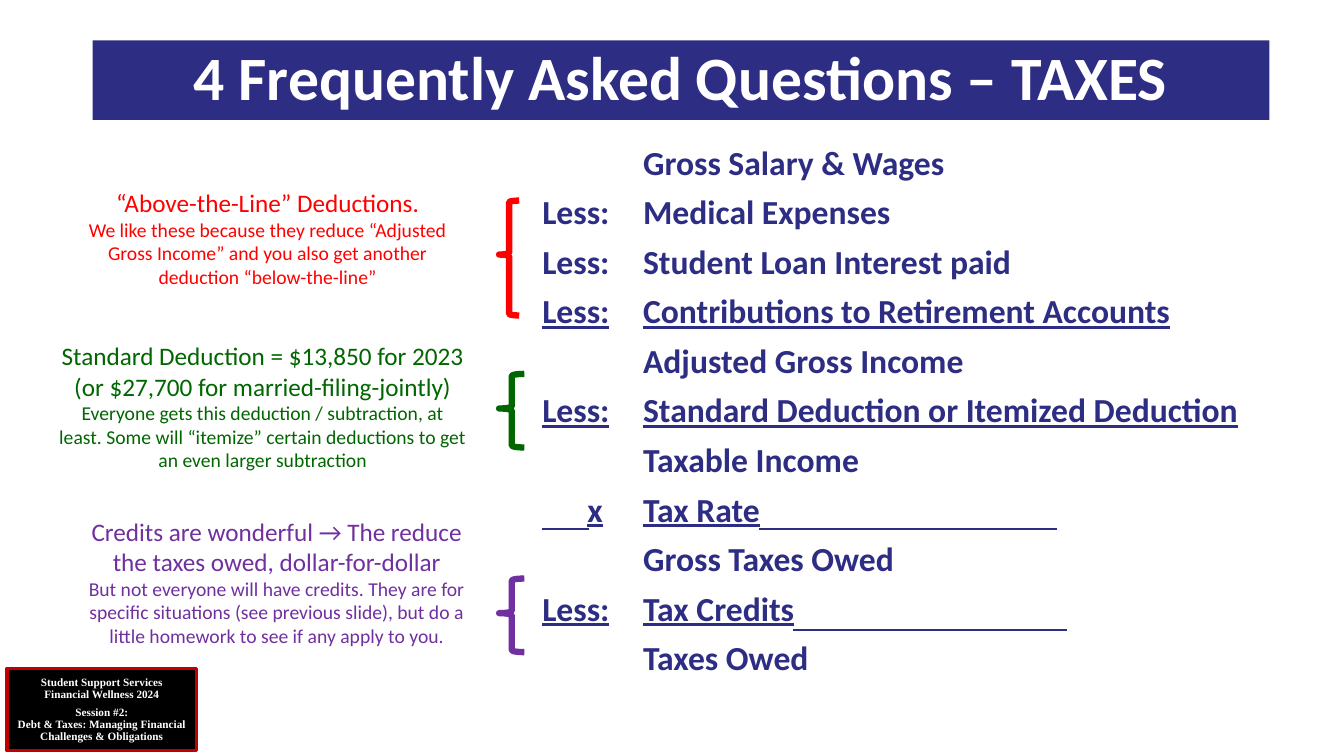
from lxml import etree
from pptx import Presentation
from pptx import util as u
from pptx.dml.color import RGBColor
from pptx.enum import shapes, text
from pptx.oxml import ns

NAVY = RGBColor(0x2D, 0x2D, 0x83)
WHITE = RGBColor(0xFF, 0xFF, 0xFF)
BLACK = RGBColor(0, 0, 0)
MAROON = RGBColor(0xC0, 0, 0)
RED = RGBColor(0xFF, 0, 0)
GREEN = RGBColor(0, 0x66, 0)
PURPLE = RGBColor(0x70, 0x30, 0xA0)

TITLE = "4 Frequently Asked Questions – TAXES"
BADGE = [
    ("Student Support Services", 0),
    ("Financial Wellness 2024", 0),
    ("Session #2:\vDebt & Taxes: Managing Financial Challenges & Obligations", 4),
]
LEDGER = [
    ("", "Gross Salary & Wages"),
    ("Less:", "Medical Expenses"),
    ("Less:", "Student Loan Interest paid"),
    ("Less:", "Contributions to Retirement Accounts"),
    ("", "Adjusted Gross Income"),
    ("Less:", "Standard Deduction or Itemized Deduction"),
    ("", "Taxable Income"),
    ("x", "Tax Rate"),
    ("", "Gross Taxes Owed"),
    ("Less:", "Tax Credits"),
    ("", "Taxes Owed"),
]
RULED = {3, 5, 7, 9}
RULES = [(7, 5.38, 5.84), (7, 7.53, 10.48), (9, 7.87, 10.58)]
NOTES = [
    (RED, (0.74, 1.81, 3.83, 1.11), (4.95, 1.99, 0.2, 1.14),
     ["“Above-the-Line” Deductions."],
     "We like these because they reduce “Adjusted Gross Income” and you also "
     "get another deduction “below-the-line”"),
    (GREEN, (0.48, 3.33, 4.25, 1.41), (4.95, 3.71, 0.25, 0.73),
     ["Standard Deduction = $13,850 for 2023",
      "(or $27,700 for married-filing-jointly)"],
     "Everyone gets this deduction / subtraction, at least. Some will “itemize” "
     "certain deductions to get an even larger subtraction"),
    (PURPLE, (0.62, 5.07, 4.25, 1.41), (4.95, 5.74, 0.25, 0.73),
     ["Credits are wonderful → The reduce the taxes owed, dollar-for-dollar"],
     "But not everyone will have credits. They are for specific situations "
     "(see previous slide), but do a little homework to see if any apply to you."),
]
PITCH = 0.5
FIRST = 1.75

deck = Presentation()
deck.slide_width, deck.slide_height = u.Inches(13.33), u.Inches(7.5)
slide = deck.slides.add_slide(deck.slide_layouts[6])


def style(run, form):
    form = dict(form)
    run.font.color.rgb = form.pop("color")
    for key, val in form.items():
        setattr(run.font, key, val)


def layout(par, form):
    for key, val in form.items():
        setattr(par, key, val)


def next_par(frame, num):
    return frame.add_paragraph() if num else frame.paragraphs[0]


def write(frame, items, form, space):
    for num, (words, size, gap) in enumerate(items):
        par = next_par(frame, num)
        par.text = words
        layout(par, {"alignment": text.PP_ALIGN.CENTER, "line_spacing": space,
                     "space_before": u.Pt(gap)})
        for run in par.runs:
            style(run, {**form, "size": u.Pt(size)})


def shape(kind, box, fill=None, line=None, width=0):
    item = slide.shapes.add_shape(kind, *map(u.Inches, box))
    item.shadow.inherit = False
    for part, color in ((item.fill, fill), (item.line.fill, line)):
        if color is None:
            part.background()
        else:
            part.solid()
            part.fore_color.rgb = color
    if line is not None:
        item.line.width = u.Pt(width)
    return item


def textbox(box):
    item = slide.shapes.add_textbox(*map(u.Inches, box))
    item.text_frame.word_wrap = True
    return item.text_frame


def tabs(par, stops):
    root = etree.SubElement(par._p.get_or_add_pPr(), ns.qn("a:tabLst"))
    for place, side in stops:
        etree.SubElement(root, ns.qn("a:tab"), pos=str(u.Inches(place)), algn=side)


badge = shape(shapes.MSO_SHAPE.RECTANGLE, (0.07, 6.63, 1.88, 0.82), BLACK, MAROON, 2.25)
layout(badge.text_frame, {"margin_left": u.Inches(0.08), "margin_right": u.Inches(0.08),
                          "word_wrap": True, "vertical_anchor": text.MSO_ANCHOR.MIDDLE})
write(badge.text_frame, [(words, 8, gap) for words, gap in BADGE],
      {"name": "Times New Roman", "bold": True, "color": WHITE}, 0.9)

ledger = textbox((5.28, 1.4, 7.19, 5.36))
for row, (label, entry) in enumerate(LEDGER):
    par = next_par(ledger, row)
    stops = [(1, "l")]
    lead = ""
    if label == "x":
        stops.insert(0, (0.6, "r"))
        lead = "\t"
    tabs(par, stops)
    layout(par, {"line_spacing": 0.9, "space_before": u.Pt(9.5 if row else 0)})
    line = row in RULED
    for words, under in ((lead, False), (label, line), ("\t", False), (entry, line)):
        if words:
            run = par.add_run()
            run.text = words
            style(run, {"name": "Calibri", "size": u.Pt(24), "bold": True,
                        "color": NAVY, "underline": under})

for row, start, end in RULES:
    high = u.Inches(FIRST + row * PITCH)
    rule = slide.shapes.add_connector(shapes.MSO_CONNECTOR.STRAIGHT,
                                      u.Inches(start), high, u.Inches(end), high)
    rule.line.color.rgb = NAVY
    rule.line.width = u.Pt(1.75)
    etree.SubElement(rule._element.spPr, ns.qn("a:effectLst"))

title = shape(shapes.MSO_SHAPE.RECTANGLE, (0.92, 0.4, 11.67, 0.79), NAVY)
title.text_frame.vertical_anchor = text.MSO_ANCHOR.MIDDLE
write(title.text_frame, [(TITLE, 44, 0)],
      {"name": "Calibri", "bold": True, "color": WHITE}, 0.9)

for color, place, span, heads, body in NOTES:
    brace = shape(shapes.MSO_SHAPE.LEFT_BRACE, span, line=color, width=4.5)
    brace.adjustments[0] = 0.08
    brace.adjustments[1] = 0.47
    note = textbox(place)
    note.auto_size = text.MSO_AUTO_SIZE.SHAPE_TO_FIT_TEXT
    write(note, [(head, 18, 0) for head in heads] + [(body, 14, 0)],
          {"name": "Calibri", "color": color}, 1.0)

deck.save("out.pptx")
